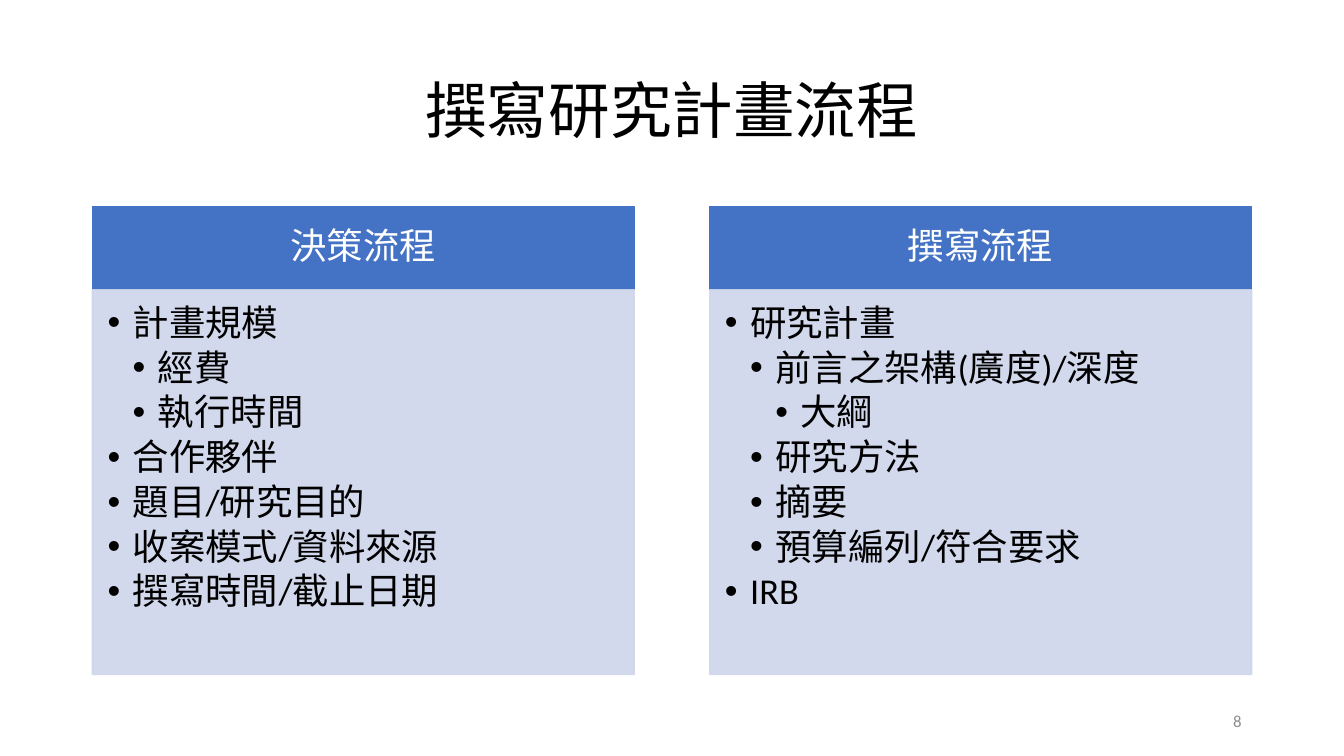
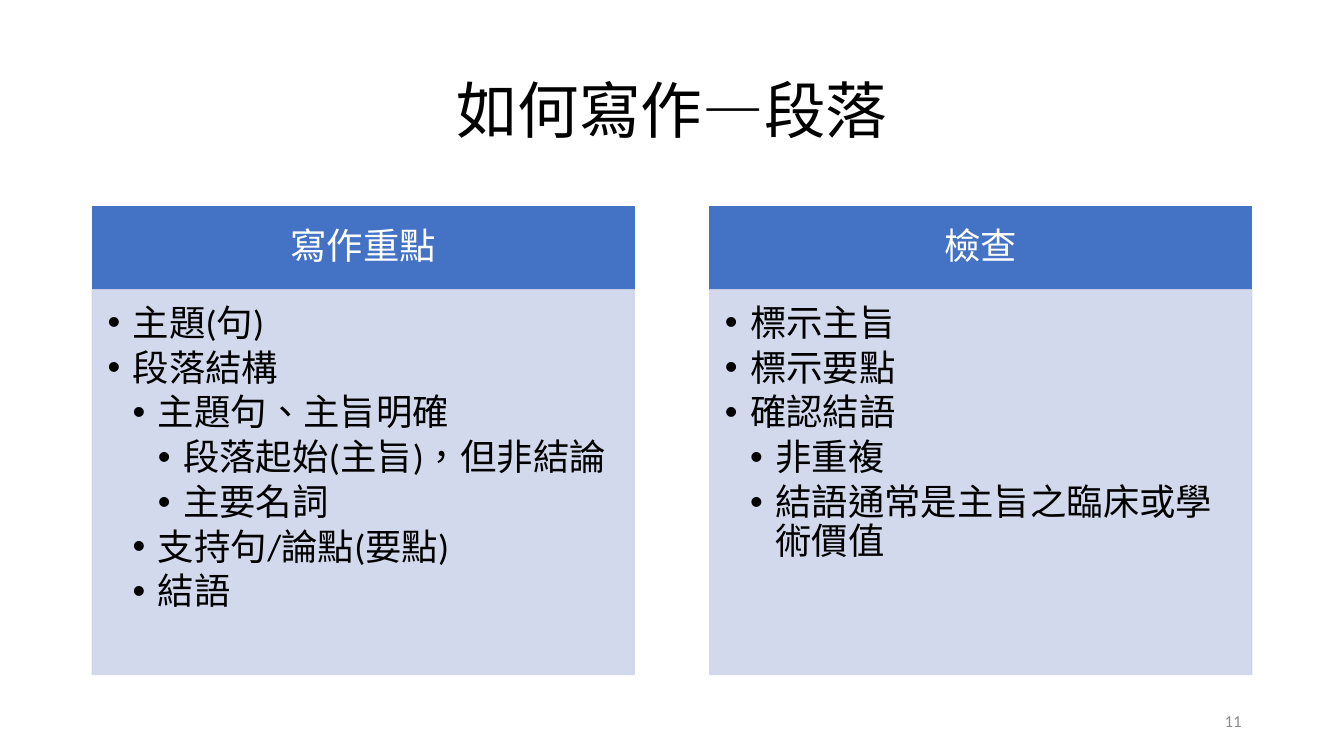
from dataclasses import dataclass

from lxml.etree import SubElement
from pptx import Presentation
from pptx.dml.color import RGBColor
from pptx.enum.lang import MSO_LANGUAGE_ID
from pptx.enum.shapes import MSO_SHAPE
from pptx.enum.text import MSO_ANCHOR, MSO_AUTO_SIZE, PP_ALIGN
from pptx.oxml.ns import qn
from pptx.util import Inches, Pt


@dataclass(frozen=True)
class Theme:
    font: str = "Calibri"
    ink: str = "000000"
    white: str = "FFFFFF"
    gray: str = "8C8C8C"
    head: str = "4472C4"
    body: str = "CFD5EA"
    alpha: int = 90
    title: int = 44
    text: int = 26
    page: int = 12
    lead: float = 0.9
    after: float = 3.9
    step: float = 0.25


@dataclass(frozen=True)
class Box:
    col: float
    row: float
    wide: float
    high: float

    def place(self):
        return [Inches(part / UNIT) for part in (self.col, self.row, self.wide, self.high)]

    def halves(self, gap):
        wide = (self.wide - gap) / 2
        return [Box(self.col + i * (wide + gap), self.row, wide, self.high) for i in range(2)]

    def split(self, high):
        return (Box(self.col, self.row, self.wide, high),
                Box(self.col, self.row + high, self.wide, self.high - high))


THEME = Theme()
UNIT = 12
COLS, ROWS = 160, 90
TITLE = Box(11, 4.8, 138, 17.4)
MAIN = Box(11, 24.6, 138, 55.7)
PAGE = Box(113, 83.4, 36, 4.8)
GAP = 9
BAND = 9.9

DECK = [
    ("撰寫研究計畫流程", "8", [
        ("決策流程", [
            (0, "計畫規模"), (1, "經費"), (1, "執行時間"), (0, "合作夥伴"),
            (0, "題目/研究目的"), (0, "收案模式/資料來源"), (0, "撰寫時間/截止日期")]),
        ("撰寫流程", [
            (0, "研究計畫"), (1, "前言之架構(廣度)/深度"), (2, "大綱"), (1, "研究方法"),
            (1, "摘要"), (1, "預算編列/符合要求"), (0, "IRB")]),
    ]),
    ("如何寫作—段落", "11", [
        ("寫作重點", [
            (0, "主題(句)"), (0, "段落結構"), (1, "主題句、主旨明確"),
            (2, "段落起始(主旨)，但非結論"), (2, "主要名詞"),
            (1, "支持句/論點(要點)"), (1, "結語")]),
        ("檢查", [
            (0, "標示主旨"), (0, "標示要點"), (0, "確認結語"), (1, "非重複"),
            (1, "結語通常是主旨之臨床或學術價值")]),
    ]),
]


def write(para, text, size, color, align, lead=THEME.lead):
    para.alignment = align
    para.line_spacing = lead
    run = para.add_run()
    run.text = text
    font = run.font
    font.name = THEME.font
    font.size = Pt(size)
    font.color.rgb = RGBColor.from_string(color)
    font.language_id = MSO_LANGUAGE_ID.TRADITIONAL_CHINESE


def frame(shape, anchor, pads=(0.1, 0.05, 0.1, 0.05)):
    text = shape.text_frame
    text.word_wrap = True
    text.auto_size = MSO_AUTO_SIZE.NONE
    text.vertical_anchor = anchor
    (text.margin_left, text.margin_top,
     text.margin_right, text.margin_bottom) = map(Inches, pads)
    return text


def block(slide, box, color, alpha=100):
    shape = slide.shapes.add_shape(MSO_SHAPE.RECTANGLE, *box.place())
    shape.shadow.inherit = False
    shape.line.width = Pt(1)
    for fill in (shape.fill, shape.line.fill):
        fill.solid()
        fill.fore_color.rgb = RGBColor.from_string(color)
    if alpha < 100:
        for tone in shape.element.spPr.iter(qn("a:srgbClr")):
            SubElement(tone, qn("a:alpha"), val=str(alpha * 1000))
    return shape


def bullet(para, level):
    para.level = level
    para.space_after = Pt(THEME.after)
    props = para._p.get_or_add_pPr()
    props.set("marL", str(Inches(THEME.step * (level + 1))))
    props.set("indent", str(-Inches(THEME.step)))
    SubElement(props, qn("a:buFont"), typeface="Arial")
    SubElement(props, qn("a:buChar"), char="•")


def panel(slide, box, name, items):
    top, rest = box.split(BAND)
    head = frame(block(slide, top, THEME.head), MSO_ANCHOR.MIDDLE, (0.2, 0.12, 0.2, 0.12))
    write(head.paragraphs[0], name, THEME.text, THEME.white, PP_ALIGN.CENTER)
    body = frame(block(slide, rest, THEME.body, THEME.alpha), MSO_ANCHOR.TOP,
                 (0.15, 0.15, 0.2, 0.23))
    for i, (level, text) in enumerate(items):
        para = body.add_paragraph() if i else body.paragraphs[0]
        write(para, text, THEME.text, THEME.ink, PP_ALIGN.LEFT)
        bullet(para, level)


def header(slide, box, text):
    title = slide.shapes.title
    title.left, title.top, title.width, title.height = box.place()
    para = frame(title, MSO_ANCHOR.MIDDLE).paragraphs[0]
    write(para, text, THEME.title, THEME.ink, PP_ALIGN.CENTER)


def footer(slide, box, number):
    para = frame(slide.shapes.add_textbox(*box.place()), MSO_ANCHOR.MIDDLE).paragraphs[0]
    write(para, number, THEME.page, THEME.gray, PP_ALIGN.RIGHT, 1.0)


def compare(deck, title, number, panels):
    slide = deck.slides.add_slide(deck.slide_layouts.get_by_name("Title Only"))
    header(slide, TITLE, title)
    for box, (name, items) in zip(MAIN.halves(GAP), panels):
        panel(slide, box, name, items)
    footer(slide, PAGE, number)


def main():
    deck = Presentation()
    deck.slide_width = Inches(COLS / UNIT)
    deck.slide_height = Inches(ROWS / UNIT)
    for title, number, panels in DECK:
        compare(deck, title, number, panels)
    deck.save("out.pptx")


if __name__ == "__main__":
    main()
